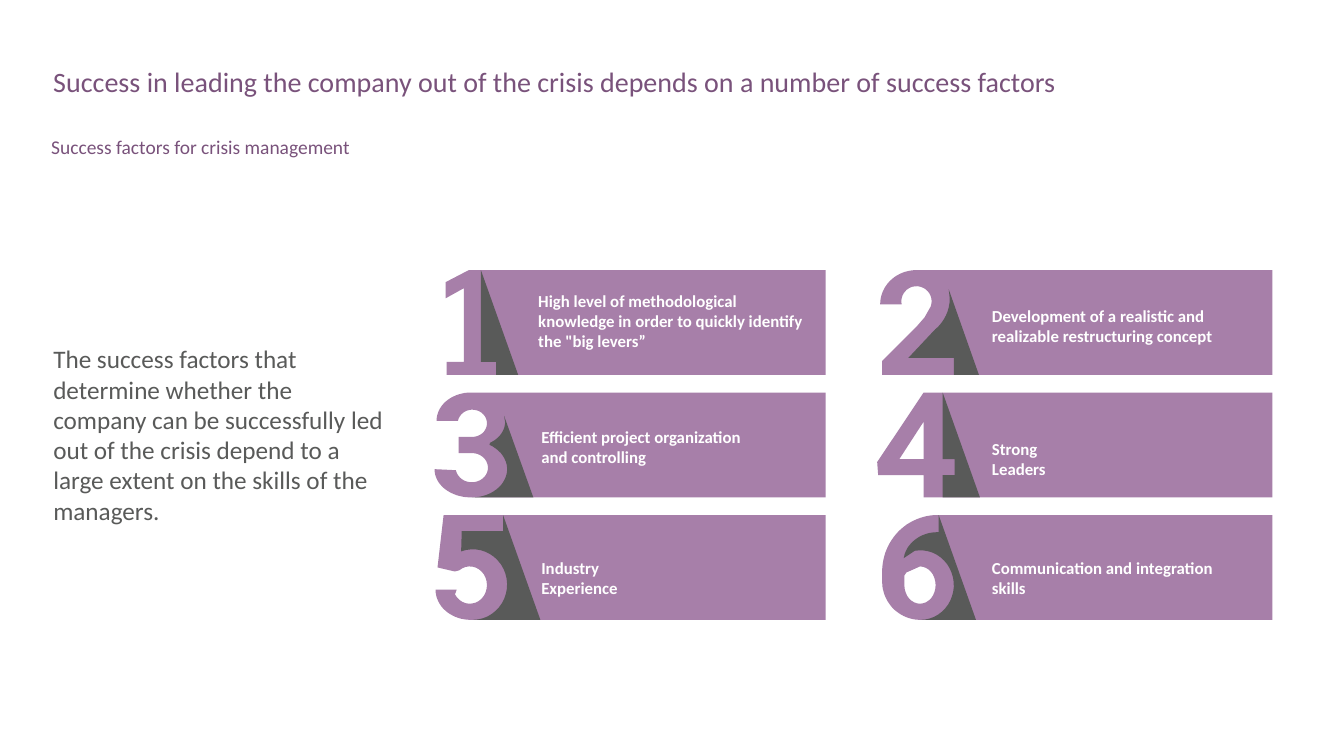
from math import cos, radians, sin

from pptx import Presentation
from pptx.dml.color import RGBColor
from pptx.enum.text import MSO_ANCHOR
from pptx.util import Inches, Pt

TOP = MSO_ANCHOR.TOP
MIDDLE = MSO_ANCHOR.MIDDLE

PURPLE = RGBColor(0x79, 0x52, 0x7B)
MAUVE = RGBColor(0xA7, 0x7F, 0xA9)
GRAY = RGBColor(0x59, 0x5A, 0x59)
WHITE = RGBColor(0xFF, 0xFF, 0xFF)

COLUMN_LEFTS = (4.31, 8.7)
PANEL_WIDTHS = (388, 392)
PANEL_HEIGHT = 104
FIRST_ROW_TOP = 2.68
ROW_PITCH = 1.215
ARC_STEPS = 24
UNITS_PER_HUNDREDTH = 10


def arc(cx, cy, rx, ry, start, end):
    angles = [radians(start + (end - start) * step / ARC_STEPS) for step in range(ARC_STEPS + 1)]
    return [(cx + rx * cos(angle), cy + ry * sin(angle)) for angle in angles]


def digit_outlines():
    one = [(34, 0), (11, 12), (11, 28), (29, 18), (29, 91), (12, 91), (12, 104)]
    one_shade = [(46, 0), (46, 91), (61, 91), (61, 104), (83, 104)]

    two = [*arc(39, 34, 36, 34, 270, 180), *arc(39, 31, 15, 15, 168, 380),
           (47, 47), (40, 55), (5, 90), (5, 104)]
    two_shade = [(71, 19), *arc(32, 28, 40, 40, 0, 50), (31, 87), (76, 87), (76, 104), (101, 104)]

    three = [*arc(36, 28, 34, 28, 270, 180), *arc(37.5, 30.5, 14.5, 13.5, 190, 450),
             (24, 44), (24, 60), *arc(37, 74.5, 16, 14.5, 270, 530), *arc(36, 76, 36, 28, 180, 90)]
    three_shade = [(69, 23), *arc(40, 29, 30, 24, 0, 60), *arc(37, 76, 35, 28, -60, 90), (98, 104)]

    four = [(46, 0), (0, 69), (1, 82), (46, 82), (46, 104)]
    four_hole = [(46, 66), (22, 66), (46, 29)]
    four_shade = [(65, 0), (65, 66), (77, 66), (77, 82), (65, 82), (65, 104), (102, 104)]

    five = [(9, 0), (3, 52), (20, 56), *arc(35, 69.5, 17, 18.5, 232, 510), (22, 74),
            *arc(36, 74, 35, 30, 180, 90)]
    five_shade = [(68, 0), (68, 16), (27, 16), *arc(38, 69, 34, 35, 250, 450), (105, 104)]

    six = [*arc(60, 56, 55, 56, 270, 180), *arc(43, 66, 38, 38, 180, 90)]
    six_hole = [*arc(42.5, 69.5, 15.5, 18.5, -90, 180), (27, 60), (29, 57)]
    six_shade = [(61, 0), (61, 17), *arc(60, 47, 34, 30, 270, 188),
                 *arc(43, 69.5, 33, 34.5, 260, 450), (98, 104)]

    return [(one, [], one_shade), (two, [], two_shade), (three, [], three_shade),
            (four, [four_hole], four_shade), (five, [], five_shade), (six, [six_hole], six_shade)]


FACTORS = [
    ('High level of methodological knowledge in order to quickly identify the "big levers”',
     (5.24, 2.83, 2.93, 0.71)),
    ("Development of a realistic and realizable restructuring concept", (9.74, 2.98, 2.51, 0.5)),
    ("Efficient project organization and controlling", (5.27, 4.18, 2.42, 0.5)),
    ("Strong Leaders", (9.74, 4.3, 1.18, 0.5)),
    ("Industry Experience", (5.27, 5.48, 1.51, 0.5)),
    ("Communication and integration skills", (9.74, 5.48, 2.64, 0.5)),
]


def add_text(slide, text, box, *, size, color, bold=False, anchor=TOP, line_spacing=1.0):
    frame = slide.shapes.add_textbox(*map(Inches, box)).text_frame
    frame.word_wrap = True
    frame.vertical_anchor = anchor
    paragraph = frame.paragraphs[0]
    paragraph.line_spacing = line_spacing
    run = paragraph.add_run()
    run.text = text
    run.font.name = "Calibri"
    run.font.size = Pt(size)
    run.font.bold = bold
    run.font.color.rgb = color


def add_outline(slide, contours, left, top, color):
    scaled = [[(x * UNITS_PER_HUNDREDTH, y * UNITS_PER_HUNDREDTH) for x, y in contour]
              for contour in contours]
    outer, *holes = scaled
    builder = slide.shapes.build_freeform(*outer[0], scale=Inches(0.01) / UNITS_PER_HUNDREDTH)
    builder.add_line_segments(outer[1:], close=True)
    for hole in holes:
        builder.move_to(*hole[0])
        builder.add_line_segments(hole[1:], close=True)
    outline = builder.convert_to_shape(Inches(left), Inches(top))
    outline.shadow.inherit = False
    outline.fill.solid()
    outline.fill.fore_color.rgb = color
    outline.line.fill.background()


def add_factor(slide, index, outlines, label, label_box):
    row, column = divmod(index, 2)
    left, top = COLUMN_LEFTS[column], FIRST_ROW_TOP + row * ROW_PITCH
    right = PANEL_WIDTHS[column]
    digit, holes, shade = outlines
    panel = [*digit, (right, PANEL_HEIGHT), (right, 0)]
    add_outline(slide, [panel, *holes], left, top, MAUVE)
    add_outline(slide, [shade], left, top, GRAY)
    add_text(slide, label, label_box, size=12, color=WHITE, bold=True)


def main():
    presentation = Presentation()
    presentation.slide_width = Inches(13.33)
    presentation.slide_height = Inches(7.5)
    slide = presentation.slides.add_slide(presentation.slide_layouts[6])

    add_text(slide, "The success factors that determine whether the company can be successfully led "
             "out of the crisis depend to a large extent on the skills of the managers.",
             (0.43, 1.79, 3.49, 5.04), size=18, color=GRAY, anchor=MIDDLE)
    add_text(slide, "Success in leading the company out of the crisis depends on a number of success factors",
             (0.43, 0.63, 12.54, 0.64), size=20, color=PURPLE, line_spacing=0.9)
    add_text(slide, "Success factors for crisis management",
             (0.41, 1.35, 12.56, 0.28), size=13.9, color=PURPLE, line_spacing=0.7)

    for index, (outlines, (label, label_box)) in enumerate(zip(digit_outlines(), FACTORS)):
        add_factor(slide, index, outlines, label, label_box)

    presentation.save("out.pptx")


if __name__ == "__main__":
    main()
